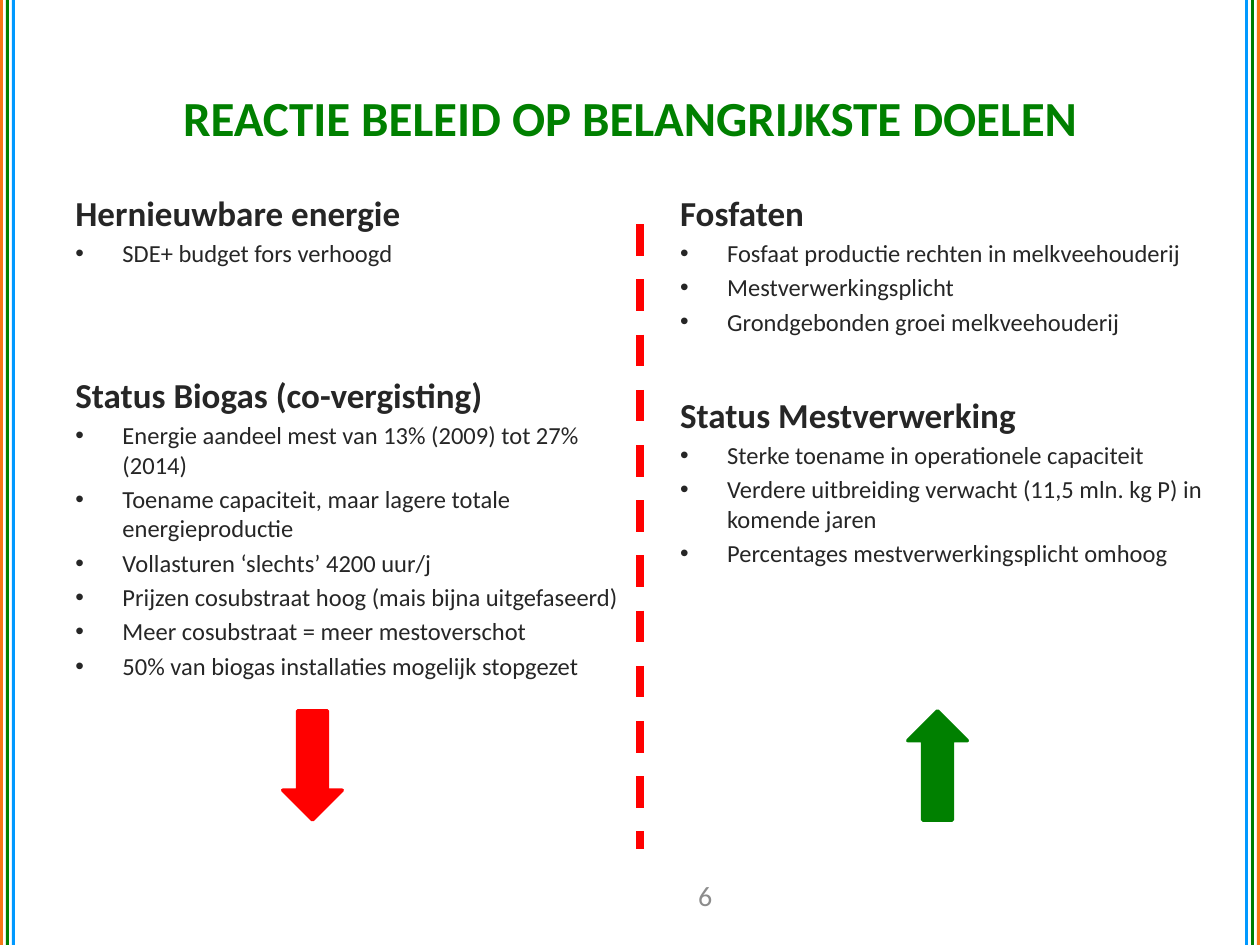
import dataclasses

import lxml.etree
import pptx
import pptx.dml.color
import pptx.enum.dml
import pptx.enum.shapes
import pptx.enum.text
import pptx.oxml.ns
import pptx.util

Cm = pptx.util.Cm
Pt = pptx.util.Pt
qn = pptx.oxml.ns.qn
CENTER = pptx.enum.text.PP_ALIGN.CENTER
MIDDLE = pptx.enum.text.MSO_ANCHOR.MIDDLE
SLIDE_WIDTH, SLIDE_HEIGHT = 25.4, 19.05


def rgb(value):
    return pptx.dml.color.RGBColor.from_string(value)


@dataclasses.dataclass(frozen=True)
class Theme:
    font: str = "Calibri"
    orange: str = "F67616"
    green: str = "008000"
    blue: str = "0099FF"
    red: str = "FF0000"
    body: str = "262626"
    muted: str = "8C8C8C"
    title_size: float = 28
    heading_size: float = 20
    bullet_size: float = 14
    number_size: float = 16


class PolicySlide:
    """Draws styled elements on the current slide."""

    def __init__(self, slide, theme):
        self.slide = slide
        self.theme = theme

    def apply(self, target, values):
        for name, value in values.items():
            setattr(target, name, value)

    def frame(self, left, top, width, height, **values):
        box = self.slide.shapes.add_textbox(Cm(left), Cm(top), Cm(width), Cm(height))
        self.apply(box.text_frame, {"word_wrap": True, **values})
        return box.text_frame

    def fill_paragraph(self, paragraph, text, size, color, bold=False, **values):
        paragraph.text = text
        self.apply(paragraph, values)
        self.apply(paragraph.font, {"name": self.theme.font, "size": Pt(size), "bold": bold})
        paragraph.font.color.rgb = rgb(color)

    def label(self, bounds, text, size, color, bold=False):
        frame = self.frame(*bounds, vertical_anchor=MIDDLE)
        self.fill_paragraph(frame.paragraphs[0], text, size, color, bold, alignment=CENTER)

    def bullet(self, paragraph):
        properties = paragraph._p.get_or_add_pPr()
        for name, value in {"marL": Cm(0.95), "indent": Cm(-0.95)}.items():
            properties.set(name, str(value))
        lxml.etree.SubElement(properties, qn("a:buFont")).set("typeface", "Arial")
        lxml.etree.SubElement(properties, qn("a:buChar")).set("char", "•")

    def column(self, left, sections, section_gap):
        frame = self.frame(left, 3.73, 11.63, 12.19)
        for index, (heading, points) in enumerate(sections):
            paragraph = frame.add_paragraph() if index else frame.paragraphs[0]
            self.fill_paragraph(paragraph, heading, self.theme.heading_size, self.theme.body,
                                True, space_before=Pt(section_gap if index else 0))
            for point in points:
                paragraph = frame.add_paragraph()
                self.bullet(paragraph)
                self.fill_paragraph(paragraph, point, self.theme.bullet_size, self.theme.body,
                                    space_before=Pt(0.2 * self.theme.bullet_size))

    def shape(self, kind, bounds, color, outline=0, rotation=0):
        shape = self.slide.shapes.add_shape(kind, *map(Cm, bounds))
        shape.shadow.inherit = False
        shape.rotation = rotation
        shape.fill.solid()
        shape.fill.fore_color.rgb = rgb(color)
        if outline:
            shape.line.color.rgb = rgb(color)
            shape.line.width = Pt(outline)
        else:
            shape.line.fill.background()

    def stripes(self):
        width, pitch = 0.06, 0.12
        colors = (self.theme.orange, self.theme.green, self.theme.blue)
        for index, color in enumerate(colors):
            offset = index * pitch
            for left in (offset, SLIDE_WIDTH - offset - width):
                self.shape(pptx.enum.shapes.MSO_SHAPE.RECTANGLE,
                           (left, 0, width, SLIDE_HEIGHT), color)

    def trend(self, left, color, rotation=0):
        self.shape(pptx.enum.shapes.MSO_SHAPE.DOWN_ARROW, (left, 14.33, 1.2, 2.2),
                   color, 2, rotation)

    def divider(self, x, top, bottom):
        line = self.slide.shapes.add_connector(
            pptx.enum.shapes.MSO_CONNECTOR.STRAIGHT, Cm(x), Cm(top), Cm(x), Cm(bottom))
        line.line.color.rgb = rgb(self.theme.red)
        self.apply(line.line, {"width": Pt(4.5),
                               "dash_style": pptx.enum.dml.MSO_LINE.DASH})
        lxml.etree.SubElement(line._element.spPr, qn("a:effectLst"))


ENERGY = [
    ("Hernieuwbare energie", ["SDE+ budget fors verhoogd"]),
    ("Status Biogas (co-vergisting)", [
        "Energie aandeel mest van 13% (2009) tot 27% (2014)",
        "Toename capaciteit, maar lagere totale energieproductie",
        "Vollasturen ‘slechts’ 4200 uur/j",
        "Prijzen cosubstraat hoog (mais bijna uitgefaseerd)",
        "Meer cosubstraat = meer mestoverschot",
        "50% van biogas installaties mogelijk stopgezet",
    ]),
]
PHOSPHATES = [
    ("Fosfaten", [
        "Fosfaat productie rechten in melkveehouderij",
        "Mestverwerkingsplicht",
        "Grondgebonden groei melkveehouderij",
    ]),
    ("Status Mestverwerking", [
        "Sterke toename in operationele capaciteit",
        "Verdere uitbreiding verwacht (11,5 mln. kg P) in komende jaren",
        "Percentages mestverwerkingsplicht omhoog",
    ]),
]


def main():
    presentation = pptx.Presentation()
    presentation.slide_width = Cm(SLIDE_WIDTH)
    presentation.slide_height = Cm(SLIDE_HEIGHT)
    theme = Theme()
    policy = PolicySlide(presentation.slides.add_slide(presentation.slide_layouts[6]), theme)
    policy.stripes()
    policy.label((1.27, 0.76, 22.86, 3.18), "REACTIE BELEID OP BELANGRIJKSTE DOELEN",
                 theme.title_size, theme.green, True)
    policy.column(1.27, ENERGY, 60.5)
    policy.label((13.11, 17.53, 2.21, 1.02), "6", theme.number_size, theme.muted)
    policy.column(13.46, PHOSPHATES, 32.5)
    policy.trend(5.7, theme.red)
    policy.trend(18.3, theme.green, 180)
    policy.divider(12.91, 4.52, 17.12)
    presentation.save("out.pptx")


if __name__ == "__main__":
    main()
